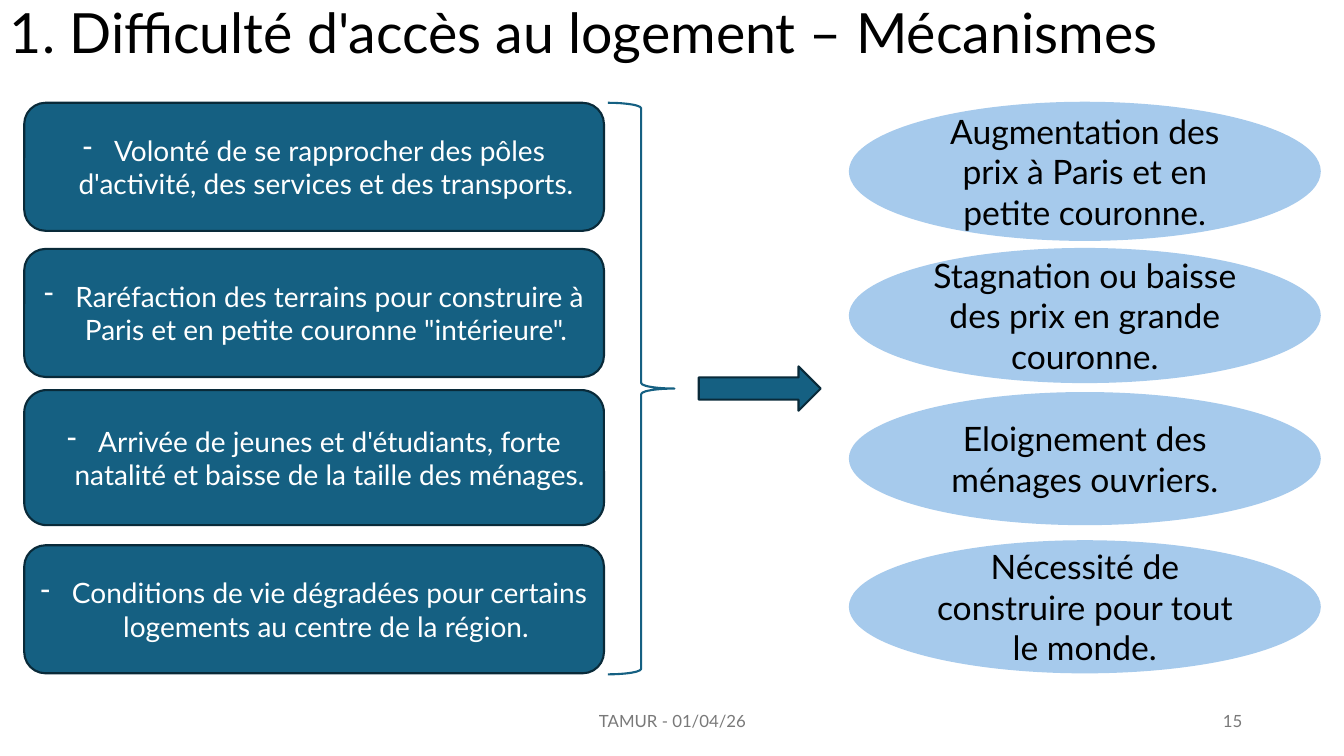
from lxml.etree import SubElement
from pptx import Presentation
from pptx.dml.color import RGBColor
from pptx.enum.shapes import MSO_SHAPE as Shape
from pptx.enum.text import MSO_ANCHOR as Anchor, PP_ALIGN as Align
from pptx.oxml.ns import qn
from pptx.util import Inches, Pt

TEAL = RGBColor(0x15, 0x60, 0x82)
DARK_TEAL = RGBColor(0x09, 0x2A, 0x39)
LIGHT_BLUE = RGBColor(0xA6, 0xCA, 0xEC)
GREY = RGBColor(0x79, 0x79, 0x79)
BLACK = RGBColor(0, 0, 0)
WHITE = RGBColor(255, 255, 255)
FONT = "Lato"

# Each row: top, height, text
CAUSES = [
    (1.02, 1.27, "Volonté de se rapprocher des pôles d'activité, des services et des transports. "),
    (2.47, 1.27, "Raréfaction des terrains pour construire à Paris et en petite couronne \"intérieure\". "),
    (3.87, 1.34, "Arrivée de jeunes et d'étudiants, forte natalité et baisse de la taille des ménages. "),
    (5.41, 1.27, "Conditions de vie dégradées pour certains logements au centre de la région. "),
]
EFFECTS = [
    (1.02, 1.36, "Augmentation des prix à Paris et en petite couronne."),
    (2.47, 1.32, "Stagnation ou baisse des prix en grande couronne."),
    (3.9, 1.3, "Eloignement des ménages ouvriers."),
    (5.37, 1.3, "Nécessité de construire pour tout le monde."),
]


def write(shape, text, size, color, alignment, dash=False):
    frame = shape.text_frame
    frame.word_wrap = True
    frame.vertical_anchor = Anchor.MIDDLE
    paragraph = frame.paragraphs[0]
    paragraph.text = text
    paragraph.alignment = alignment
    if dash:
        properties = paragraph._p.get_or_add_pPr()
        properties.set("marL", str(Inches(0.31)))
        properties.set("indent", str(-Inches(0.31)))
        SubElement(properties, qn("a:buFontTx"))
        SubElement(properties, qn("a:buChar"), char="-")
    font = paragraph.runs[0].font
    for name, value in {"name": FONT, "size": Pt(size)}.items():
        setattr(font, name, value)
    font.color.rgb = color
    return paragraph


def add_label(slide, box, text, size, color, alignment):
    label = slide.shapes.add_textbox(*map(Inches, box))
    return write(label, text, size, color, alignment)


def add_figure(slide, kind, box, fill, line):
    shape = slide.shapes.add_shape(kind, *map(Inches, box))
    shape.shadow.inherit = False
    if fill is None:
        shape.fill.background()
    else:
        shape.fill.solid()
        shape.fill.fore_color.rgb = fill
    shape.line.color.rgb = line
    shape.line.width = Pt(1.5)
    return shape


def add_causes(slide, left, width):
    for top, height, text in CAUSES:
        card = add_figure(slide, Shape.ROUNDED_RECTANGLE,
                          (left, top, width, height), TEAL, DARK_TEAL)
        write(card, text, 20, WHITE, Align.CENTER, dash=True)


def add_link(slide, left, top, height):
    """Brace that gathers the causes, and the arrow to the effects."""
    add_figure(slide, Shape.RIGHT_BRACE, (left, top, 0.66, height), None, TEAL)
    arrow_top = top + height / 2 - 0.22
    add_figure(slide, Shape.RIGHT_ARROW, (left + 0.9, arrow_top, 1.21, 0.44),
               TEAL, DARK_TEAL)


def add_effects(slide, left, width):
    for top, height, text in EFFECTS:
        oval = add_figure(slide, Shape.OVAL, (left, top, width, height),
                          LIGHT_BLUE, LIGHT_BLUE)
        write(oval, text, 24, BLACK, Align.CENTER)


def add_footer(slide, top, height):
    add_label(slide, (4.42, top, 4.5, height), "TAMUR - 01/04/26", 12, GREY, Align.CENTER)
    add_label(slide, (9.42, top, 3, height), "15", 12, GREY, Align.RIGHT)


def main():
    presentation = Presentation()
    presentation.slide_width = Inches(13.33)
    presentation.slide_height = Inches(7.5)
    slide = presentation.slides.add_slide(presentation.slide_layouts[6])

    # Title
    title = add_label(slide, (0, 0.01, 13.32, 0.68),
                      "1. Difficulté d'accès au logement – Mécanismes",
                      39.6, BLACK, Align.LEFT)
    title.line_spacing = 0.9

    # Causes, link and effects
    add_causes(slide, 0.24, 5.75)
    add_link(slide, 6.03, 1.02, 5.67)
    add_effects(slide, 8.43, 4.66)

    add_footer(slide, 6.95, 0.4)
    presentation.save("out.pptx")


if __name__ == "__main__":
    main()
